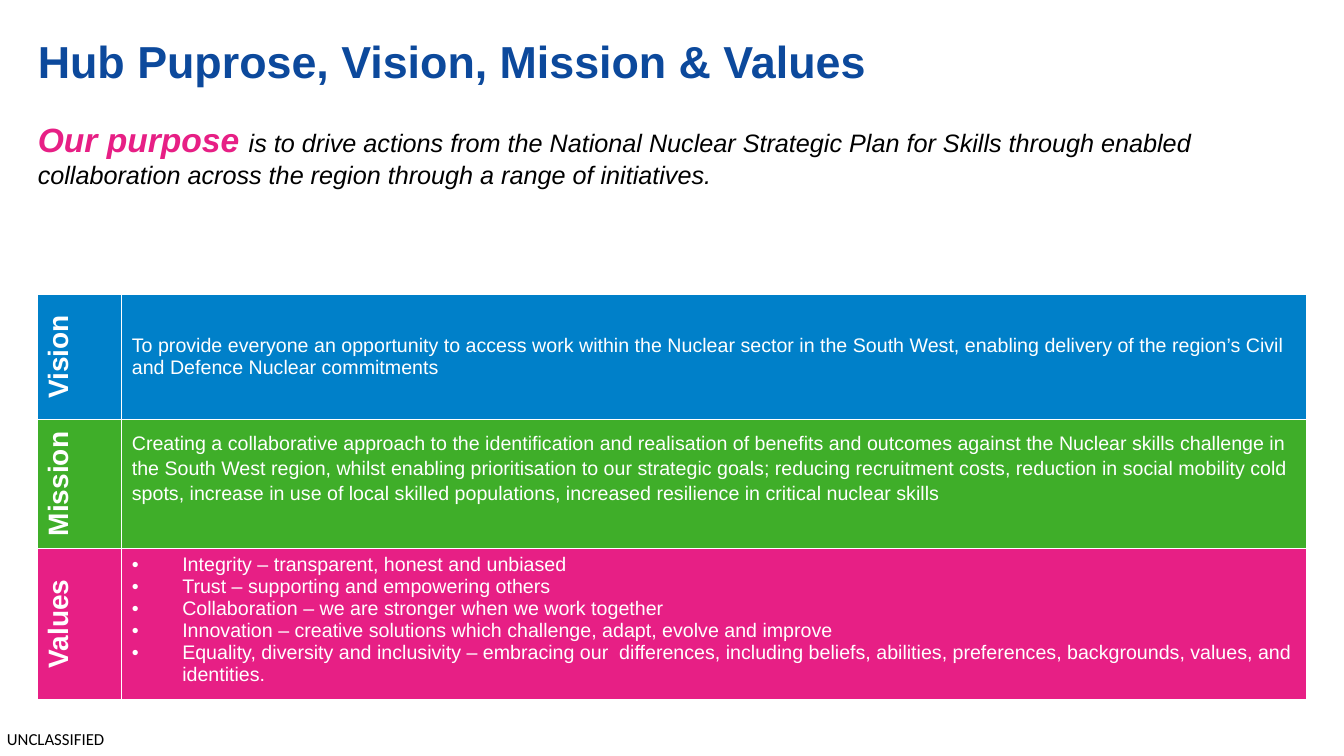
from dataclasses import dataclass

from lxml.etree import SubElement
from pptx import Presentation
from pptx.dml.color import RGBColor as RGB
from pptx.enum.text import MSO_ANCHOR as Anchor, MSO_AUTO_SIZE as Fit, PP_ALIGN as Align
from pptx.oxml import parse_xml
from pptx.oxml.ns import nsdecls, qn
from pptx.util import Pt


@dataclass(frozen=True)
class Theme:
    font: str = "Arial"
    mark_font: str = "Calibri"
    navy: str = "0C499C"
    blue: str = "0080C9"
    green: str = "3FAE29"
    pink: str = "E71F85"
    white: str = "FFFFFF"
    black: str = "000000"
    title: int = 32
    lead: int = 24
    text: int = 18
    label: int = 20
    cell: int = 14
    mark: int = 12


class Deck:
    def __init__(self, theme):
        self.theme = theme
        self.prs = Presentation()
        self.prs.slide_width, self.prs.slide_height = Pt(960), Pt(540)
        self.slide = self.prs.slides.add_slide(self.prs.slide_layouts[5])

    def style(self, font, size, color, bold=False, italic=False, name=None):
        font.name = name or self.theme.font
        font.size = Pt(size)
        font.bold, font.italic = bold, italic
        font.color.rgb = RGB.from_string(color)

    def frame(self, shape, pads):
        frame = shape.text_frame
        frame.word_wrap = True
        frame.auto_size = Fit.NONE
        (frame.margin_left, frame.margin_top,
         frame.margin_right, frame.margin_bottom) = map(Pt, pads)
        return frame

    def title(self, text, x, y, w, h):
        shape = self.slide.shapes.title
        shape.left, shape.top, shape.width, shape.height = map(Pt, (x, y, w, h))
        frame = self.frame(shape, (0, 3.6, 7.2, 3.6))
        frame.vertical_anchor = Anchor.MIDDLE
        para = frame.paragraphs[0]
        para.text = text
        para.alignment = Align.LEFT
        para.line_spacing = 0.9
        self.style(para.font, self.theme.title, self.theme.navy, bold=True)

    def box(self, x, y, w, h, pads=(0, 0, 0, 0)):
        return self.frame(self.slide.shapes.add_textbox(*map(Pt, (x, y, w, h))), pads)

    def mark(self, text, x, y, w, h):
        para = self.box(x, y, w, h).paragraphs[0]
        para.text = text
        self.style(para.font, self.theme.mark, self.theme.black, name=self.theme.mark_font)

    def purpose(self, lead, lines, x, y, w, h):
        """Italic statement that opens with a large coloured lead."""
        theme = self.theme
        frame = self.box(x, y, w, h, (0, 3.6, 7.2, 3.6))
        for i, line in enumerate(lines):
            para = frame.paragraphs[0] if i == 0 else frame.add_paragraph()
            if i == 0:
                run = para.add_run()
                run.text = lead
                self.style(run.font, theme.lead, theme.pink, bold=True, italic=True)
            run = para.add_run()
            run.text = line
            self.style(run.font, theme.text, theme.black, italic=True)

    def paint(self, cell, color):
        """Fill a cell and rule its four sides in white."""
        cell.fill.solid()
        cell.fill.fore_color.rgb = RGB.from_string(color)
        props = cell._tc.get_or_add_tcPr()
        for i, side in enumerate(("lnL", "lnR", "lnT", "lnB")):
            props.insert(i, parse_xml(
                f'<a:{side} {nsdecls("a")} w="{Pt(1)}"><a:solidFill>'
                f'<a:srgbClr val="{self.theme.white}"/></a:solidFill></a:{side}>'))

    def label(self, cell, text):
        cell._tc.get_or_add_tcPr().set("vert", "vert270")
        para = cell.text_frame.paragraphs[0]
        para.text = text
        para.alignment = Align.CENTER
        self.style(para.font, self.theme.label, self.theme.white, bold=True)

    def words(self, cell, lines, spread):
        """Write one plain paragraph, or a bulleted list of several."""
        frame = cell.text_frame
        frame.text = "\n".join(lines)
        listed = len(lines) > 1
        cell.vertical_anchor = Anchor.TOP if listed else Anchor.MIDDLE
        if spread:
            cell.margin_bottom = Pt(28)
        for para in frame.paragraphs:
            if spread:
                para.line_spacing, para.space_after = 1.15, Pt(10)
            if listed:
                props = para._p.get_or_add_pPr()
                props.set("marL", str(Pt(36)))
                props.set("indent", str(Pt(-36)))
                SubElement(props, qn("a:buFont")).set("typeface", self.theme.font)
                SubElement(props, qn("a:buChar")).set("char", "•")
            self.style(para.font, self.theme.cell, self.theme.white)

    def table(self, rows, x, y, widths, heights):
        shape = self.slide.shapes.add_table(
            len(rows), len(widths), Pt(x), Pt(y), Pt(sum(widths)), Pt(sum(heights)))
        table = shape.table
        table.first_row = table.horz_banding = False
        for col, width in zip(table.columns, widths):
            col.width = Pt(width)
        for row, height, (name, color, lines, spread) in zip(table.rows, heights, rows):
            row.height = Pt(height)
            head, body = row.cells
            for cell in (head, body):
                self.paint(cell, color)
            self.label(head, name)
            self.words(body, lines, spread)


def main():
    theme = Theme()
    deck = Deck(theme)
    left, wide = 27, 906
    deck.mark("UNCLASSIFIED", 5, 520.5, 75, 14.5)
    deck.title("Hub Puprose, Vision, Mission & Values", left, 24.5, 857.5, 42.5)
    deck.table([
        ("Vision", theme.blue, [
            "To provide everyone an opportunity to access work within the Nuclear sector "
            "in the South West, enabling delivery of the region’s Civil and Defence "
            "Nuclear commitments"], False),
        ("Mission", theme.green, [
            "Creating a collaborative approach to the identification and realisation of "
            "benefits and outcomes against the Nuclear skills challenge in the South West "
            "region, whilst enabling prioritisation to our strategic goals; reducing "
            "recruitment costs, reduction in social mobility cold spots, increase in use "
            "of local skilled populations, increased resilience in critical nuclear "
            "skills"], True),
        ("Values", theme.pink, [
            "Integrity – transparent, honest and unbiased",
            "Trust – supporting and empowering others",
            "Collaboration – we are stronger when we work together",
            "Innovation – creative solutions which challenge, adapt, evolve and improve",
            "Equality, diversity and inclusivity – embracing our  differences, including "
            "beliefs, abilities, preferences, backgrounds, values, and identities."], False),
    ], left, 210.5, (60, wide - 60), (89, 92.5, 107.5))
    deck.purpose("Our purpose ", [
        "is to drive actions from the National Nuclear Strategic Plan for Skills "
        "through enabled",
        "collaboration across the region through a range of initiatives.",
    ], left, 81.5, wide, 82)
    deck.prs.save("out.pptx")


if __name__ == "__main__":
    main()
